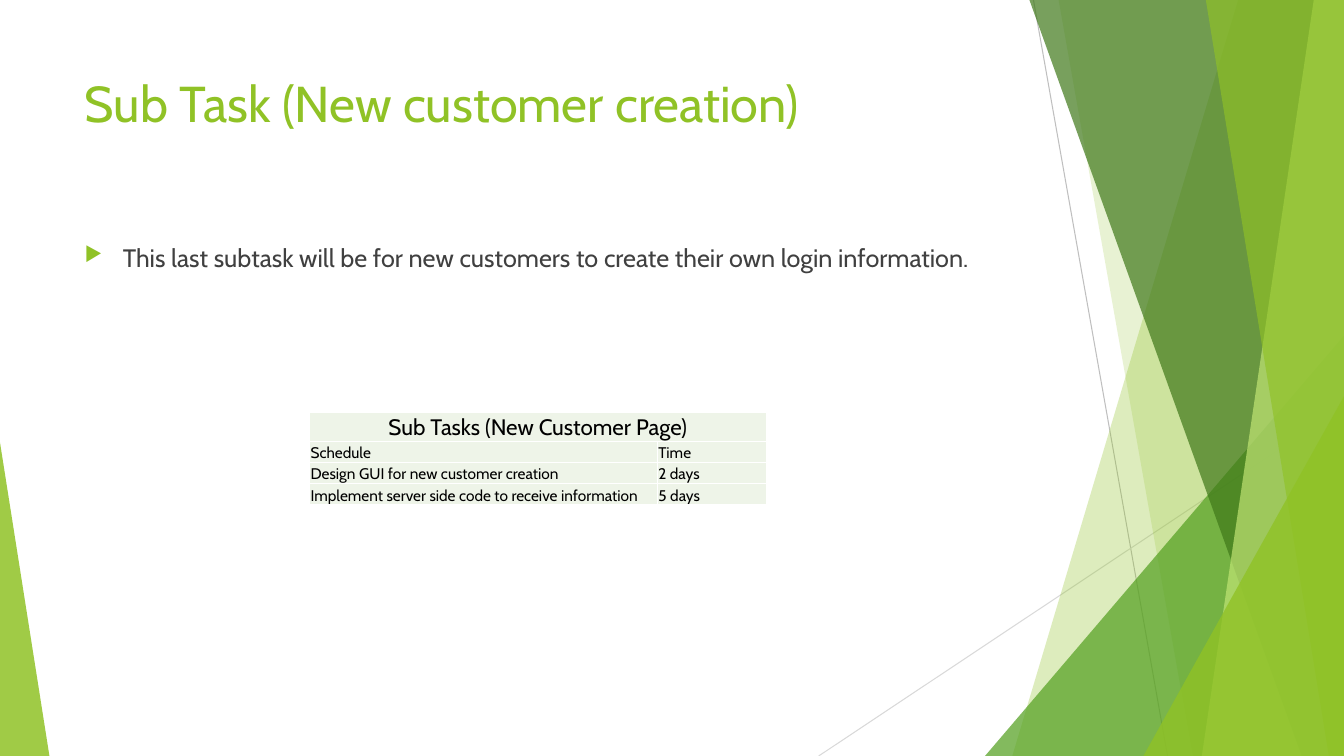
from lxml.etree import SubElement
from pptx import Presentation
from pptx.dml.color import RGBColor
from pptx.enum.shapes import MSO_CONNECTOR, MSO_SHAPE
from pptx.enum.text import MSO_ANCHOR, PP_ALIGN
from pptx.oxml.ns import qn
from pptx.util import Inches, Pt

WIDTH, HEIGHT = 13.33, 7.5
FONT = "Cabin"
LIME, DARK, BLACK, WHITE = "90C226", "404040", "000000", "FFFFFF"
CELL_FILL = "EEF4E8"

TITLE = "Sub Task (New customer creation)"
BODY = "This last subtask will be for new customers to create their own login information."
TABLE_TITLE = "Sub Tasks (New Customer Page)"
TASKS = [
    ("Schedule", "Time"),
    ("Design GUI for new customer creation", "2 days"),
    ("Implement server side code to receive information", "5 days"),
]
COLUMN_WIDTHS = (3.45, 1.08)
ROW_HEIGHTS = (0.29,) + (0.21,) * len(TASKS)
TABLE_LEFT, TABLE_TOP = 3.07, 4.09
TEXT_LEFT, TEXT_WIDTH = 0.74, 9.4

# Thin lines: start, end, colour
RAYS = [
    ((10.25, 0), (11.58, HEIGHT), "BFBFBF"),
    ((WIDTH, 4.03), (8.12, HEIGHT), "D9D9D9"),
]
# Back to front. Bands reach the right edge: top x, bottom x, colour, opacity.
# Wedges stand on the bottom edge: left, top, width, apex share, colour, opacity.
FACETS = [
    ("band", 12.28, 10.04, LIME, 30),
    ("band", 10.5, 11.83, LIME, 20),
    ("wedge", 9.77, 3.33, 3.56, 1, "54A021", 72),
    ("band", 10.21, 12.91, "3F7819", 70),
    ("band", 13.03, 11.92, "C0E474", 70),
    ("band", 11.96, 13.18, LIME, 65),
    ("wedge", 11.34, 3.93, 1.99, 1, LIME, 80),
    ("wedge", 0, 4.39, 0.49, 0, LIME, 85),
]


def rgb(value):
    return RGBColor.from_string(value)


def paint(shape, color, opacity):
    shape.shadow.inherit = False
    shape.line.fill.background()
    shape.fill.solid()
    shape.fill.fore_color.rgb = rgb(color)
    tint = shape.fill._xPr.find(qn("a:solidFill"))[0]
    SubElement(tint, qn("a:alpha"), val=str(opacity * 1000))


def add_ray(page, start, end, color):
    ray = page.shapes.add_connector(
        MSO_CONNECTOR.STRAIGHT, *(Inches(value) for value in start + end))
    ray.line.color.rgb = rgb(color)
    ray.line.width = Pt(0.75)
    SubElement(ray._element.spPr, qn("a:effectLst"))


def add_band(page, top_x, bottom_x, color, opacity):
    corners = [(Inches(x), Inches(y)) for x, y in (
        (top_x, 0), (WIDTH, 0), (WIDTH, HEIGHT), (bottom_x, HEIGHT))]
    outline = page.shapes.build_freeform(*corners[0])
    outline.add_line_segments(corners[1:], close=True)
    paint(outline.convert_to_shape(), color, opacity)


def add_wedge(page, left, top, width, apex, color, opacity):
    wedge = page.shapes.add_shape(
        MSO_SHAPE.ISOSCELES_TRIANGLE, Inches(left), Inches(top),
        Inches(width), Inches(HEIGHT - top))
    wedge.adjustments[0] = apex
    paint(wedge, color, opacity)


def write(para, text, size, color):
    span = para.add_run()
    span.text = text
    span.font.name = FONT
    span.font.size = Pt(size)
    span.font.color.rgb = rgb(color)


def add_text(page, top, height, text, size, color):
    box = page.shapes.add_textbox(
        Inches(TEXT_LEFT), Inches(top), Inches(TEXT_WIDTH), Inches(height))
    box.text_frame.word_wrap = True
    para = box.text_frame.paragraphs[0]
    write(para, text, size, color)
    return para


def add_bullet(para):
    para.space_before = Pt(10)
    props = para._p.get_or_add_pPr()
    props.set("marL", str(Inches(0.38)))
    props.set("indent", str(-Inches(0.38)))
    SubElement(SubElement(props, qn("a:buClr")), qn("a:srgbClr"), val=LIME)
    SubElement(props, qn("a:buSzPct"), val="80000")
    SubElement(props, qn("a:buChar"), char="▶")


def style_cell(cell):
    cell.margin_left = cell.margin_right = cell.margin_top = Inches(0.01)
    cell.margin_bottom = 0
    cell.vertical_anchor = MSO_ANCHOR.BOTTOM
    props = cell._tc.get_or_add_tcPr()
    for side in ("lnL", "lnR", "lnT", "lnB"):
        border = SubElement(props, qn(f"a:{side}"), w=str(Pt(1)))
        SubElement(SubElement(border, qn("a:solidFill")), qn("a:srgbClr"), val=WHITE)
    cell.fill.solid()
    cell.fill.fore_color.rgb = rgb(CELL_FILL)


def add_schedule(page):
    table = page.shapes.add_table(
        len(ROW_HEIGHTS), len(COLUMN_WIDTHS), Inches(TABLE_LEFT), Inches(TABLE_TOP),
        Inches(sum(COLUMN_WIDTHS)), Inches(sum(ROW_HEIGHTS))).table
    table.first_row = table.horz_banding = False
    for column, width in zip(table.columns, COLUMN_WIDTHS):
        column.width = Inches(width)
    for row, height in zip(table.rows, ROW_HEIGHTS):
        row.height = Inches(height)
    for cell in table.iter_cells():
        style_cell(cell)

    heading = table.cell(0, 0)
    heading.merge(table.cell(0, len(COLUMN_WIDTHS) - 1))
    para = heading.text_frame.paragraphs[0]
    para.alignment = PP_ALIGN.CENTER
    write(para, TABLE_TITLE, 16, BLACK)
    for row, task in enumerate(TASKS, start=1):
        for column, text in enumerate(task):
            write(table.cell(row, column).text_frame.paragraphs[0], text, 11, BLACK)


def main():
    deck = Presentation()
    deck.slide_width, deck.slide_height = Inches(WIDTH), Inches(HEIGHT)
    page = deck.slides.add_slide(deck.slide_layouts[6])
    for ray in RAYS:
        add_ray(page, *ray)
    draw = {"band": add_band, "wedge": add_wedge}
    for kind, *facet in FACETS:
        draw[kind](page, *facet)
    add_text(page, 0.67, 1.44, TITLE, 36, LIME)
    add_bullet(add_text(page, 2.35, 4.24, BODY, 18, DARK))
    add_schedule(page)
    deck.save("out.pptx")


if __name__ == "__main__":
    main()
